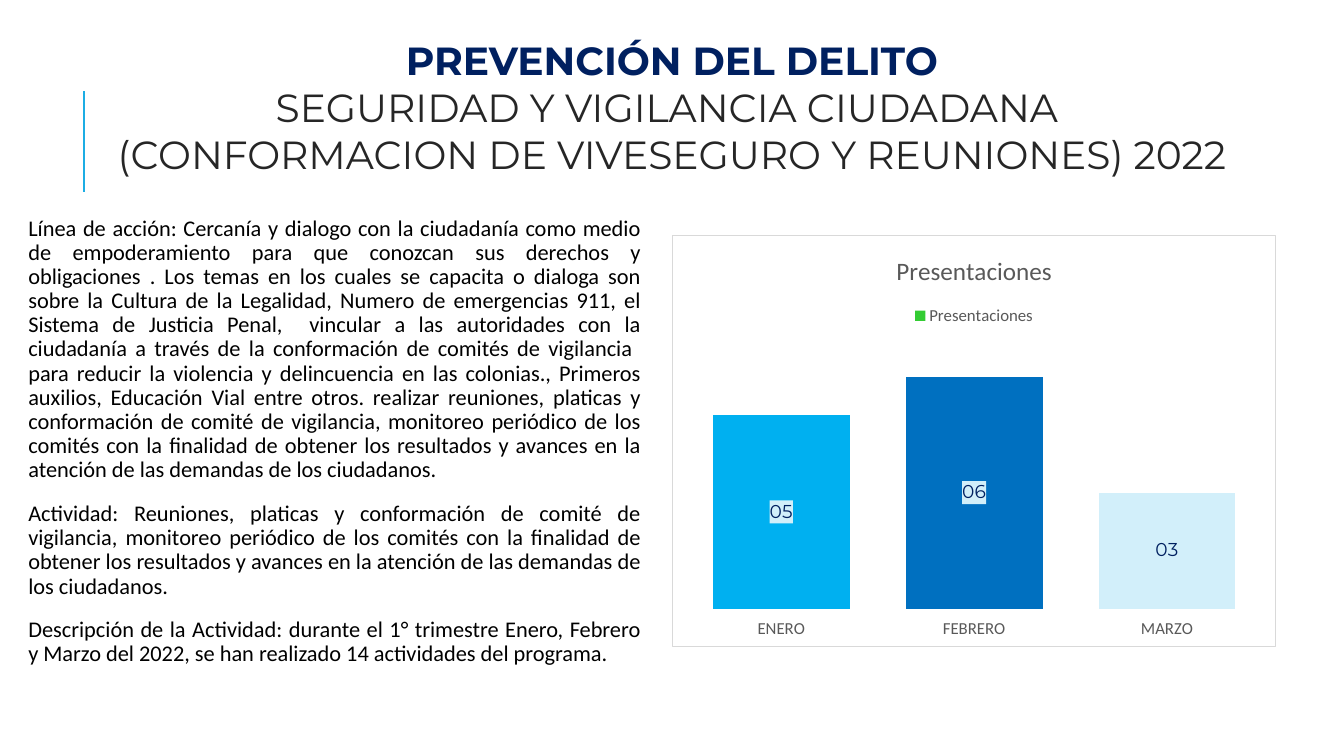
from pptx import Presentation
from pptx.chart.data import CategoryChartData
from pptx.dml.color import RGBColor
from pptx.enum.chart import XL_CHART_TYPE, XL_LABEL_POSITION, XL_LEGEND_POSITION, XL_TICK_LABEL_POSITION, XL_TICK_MARK
from pptx.enum.shapes import MSO_CONNECTOR
from pptx.enum.text import MSO_ANCHOR, MSO_AUTO_SIZE, PP_ALIGN
from pptx.oxml import parse_xml
from pptx.oxml.ns import nsdecls, qn
from pptx.util import Pt

STACKED = XL_CHART_TYPE.COLUMN_STACKED
CENTER_LABEL = XL_LABEL_POSITION.CENTER
LEGEND_TOP = XL_LEGEND_POSITION.TOP
LABELS_LOW = XL_TICK_LABEL_POSITION.LOW
NO_TICK = XL_TICK_MARK.NONE
STRAIGHT = MSO_CONNECTOR.STRAIGHT
TOP = MSO_ANCHOR.TOP
NO_FIT = MSO_AUTO_SIZE.NONE
CENTER, JUSTIFY = PP_ALIGN.CENTER, PP_ALIGN.JUSTIFY

ACCENT, NAVY, DARK, GREY = "1CADE4", "002060", "262626", "595959"


def color(value):
    return RGBColor.from_string(value)


def style(font, name, size, value, bold=False):
    font.name, font.size, font.bold = name, Pt(size), bold
    font.color.rgb = color(value)


deck = Presentation()
deck.slide_width, deck.slide_height = Pt(960), Pt(540)
page = deck.slides.add_slide(deck.slide_layouts[1])

# Accent line beside the title
accent = page.shapes.add_connector(STRAIGHT, Pt(60), Pt(137), Pt(60), Pt(65))
accent.line.color.rgb = color(ACCENT)
accent.line.width = Pt(1.5)
accent.element.spPr.append(parse_xml(f"<a:effectLst {nsdecls('a')}/>"))

# Title
title = page.shapes.title
title.left, title.top, title.width, title.height = Pt(9.4), Pt(22.3), Pt(941), Pt(103)
frame = title.text_frame
frame.text = ("PREVENCIÓN DEL DELITO\n"
              "SEGURIDAD Y VIGILANCIA CIUDADANA \n"
              "(CONFORMACION DE VIVESEGURO Y REUNIONES) 2022")
frame.auto_size, frame.vertical_anchor, frame.word_wrap = NO_FIT, TOP, True
for number, para in enumerate(frame.paragraphs):
    para.alignment = CENTER
    style(para.runs[0].font, "Montserrat", 28, DARK if number else NAVY, number == 0)

# Description
paragraphs = [
    "Línea de acción: Cercanía y dialogo con la ciudadanía como medio de empoderamiento para que "
    "conozcan sus derechos y obligaciones . Los temas en los cuales se capacita o dialoga son sobre "
    "la Cultura de la Legalidad, Numero de emergencias 911, el Sistema de Justicia Penal,  vincular a "
    "las autoridades con la ciudadanía a través de la conformación de comités de vigilancia  para "
    "reducir la violencia y delincuencia en las colonias., Primeros auxilios, Educación Vial entre "
    "otros. realizar reuniones, platicas y conformación de comité de vigilancia, monitoreo periódico "
    "de los comités con la finalidad de obtener los resultados y avances en la atención de las "
    "demandas de los ciudadanos.",
    "Actividad: Reuniones, platicas y conformación de comité de vigilancia, monitoreo periódico de "
    "los comités con la finalidad de obtener los resultados y avances en la atención de las demandas "
    "de los ciudadanos.",
    "Descripción de la Actividad: durante el 1° trimestre Enero, Febrero y Marzo del 2022, se han "
    "realizado 14 actividades del programa.",
]
body = page.placeholders[1]
body.left, body.top, body.width, body.height = Pt(9.4), Pt(151.2), Pt(452.2), Pt(357.8)
frame = body.text_frame
frame.text = "\n".join(paragraphs)
frame.auto_size, frame.vertical_anchor, frame.word_wrap = NO_FIT, TOP, True
frame.margin_left = frame.margin_right = frame.margin_top = frame.margin_bottom = Pt(3.6)
for para in frame.paragraphs:
    para.alignment = JUSTIFY
    para.line_spacing = 0.9
    para.space_before, para.space_after = Pt(12), Pt(2)
    style(para.runs[0].font, "Calibri", 16, "000000")
    properties = para._p.get_or_add_pPr()
    properties.set("marL", str(Pt(7.2)))
    properties.set("indent", str(-Pt(7.2)))
    properties.append(parse_xml(
        f'<a:buClr {nsdecls("a")}><a:srgbClr val="{ACCENT}"/></a:buClr>'))
    properties.append(parse_xml(f'<a:buChar {nsdecls("a")} char=" "/>'))

# Monthly chart
data = CategoryChartData()
data.categories = ["ENERO", "FEBRERO", "MARZO"]
data.add_series("Presentaciones", [5, 6, 3])
chart = page.shapes.add_chart(STACKED, Pt(480.2), Pt(167.8), Pt(431.3), Pt(294.5), data).chart
style(chart.font, "Calibri", 10, "000000")
chart.has_title = True
chart.chart_title.text_frame.text = "Presentaciones"
style(chart.chart_title.text_frame.paragraphs[0].runs[0].font, "Calibri", 18, GREY)
chart.has_legend = True
chart.legend.position = LEGEND_TOP
chart.legend.include_in_layout = False
style(chart.legend.font, "Calibri", 12, GREY)

months = chart.category_axis
months.major_tick_mark = NO_TICK
months.tick_label_position = LABELS_LOW
months.format.line.fill.background()
style(months.tick_labels.font, "Calibri", 12, GREY)
values = chart.value_axis
values.minimum_scale, values.maximum_scale = 0, 7
values.has_major_gridlines = False
values.visible = False

plot = chart.plots[0]
plot.gap_width, plot.overlap, plot.vary_by_categories = 41, 100, False
series = plot.series[0]
series.format.fill.solid()
series.format.fill.fore_color.rgb = color("33CC33")
for index, fill_color in enumerate(["00B0F0", "0070C0", "D2EFFA"]):
    fill = series.points[index].format.fill
    fill.solid()
    fill.fore_color.rgb = color(fill_color)

labels = series.data_labels
labels.show_value = True
labels.number_format, labels.number_format_is_linked = "00", False
labels.position = CENTER_LABEL
style(labels.font, "Montserrat", 13.3, NAVY)

# Label background and chart border
chart_space = chart._chartSpace
label_format = next(chart_space.iter(qn("c:dLbls"))).find(qn("c:numFmt"))
label_format.addnext(parse_xml(
    f'<c:spPr {nsdecls("c", "a")}><a:solidFill><a:srgbClr val="D2EFFA"/></a:solidFill></c:spPr>'))
chart_space.find(qn("c:chart")).addnext(parse_xml(
    f'<c:spPr {nsdecls("c", "a")}><a:noFill/><a:ln w="{Pt(0.75)}"><a:solidFill>'
    '<a:srgbClr val="D9D9D9"/></a:solidFill></a:ln></c:spPr>'))

deck.save("out.pptx")
